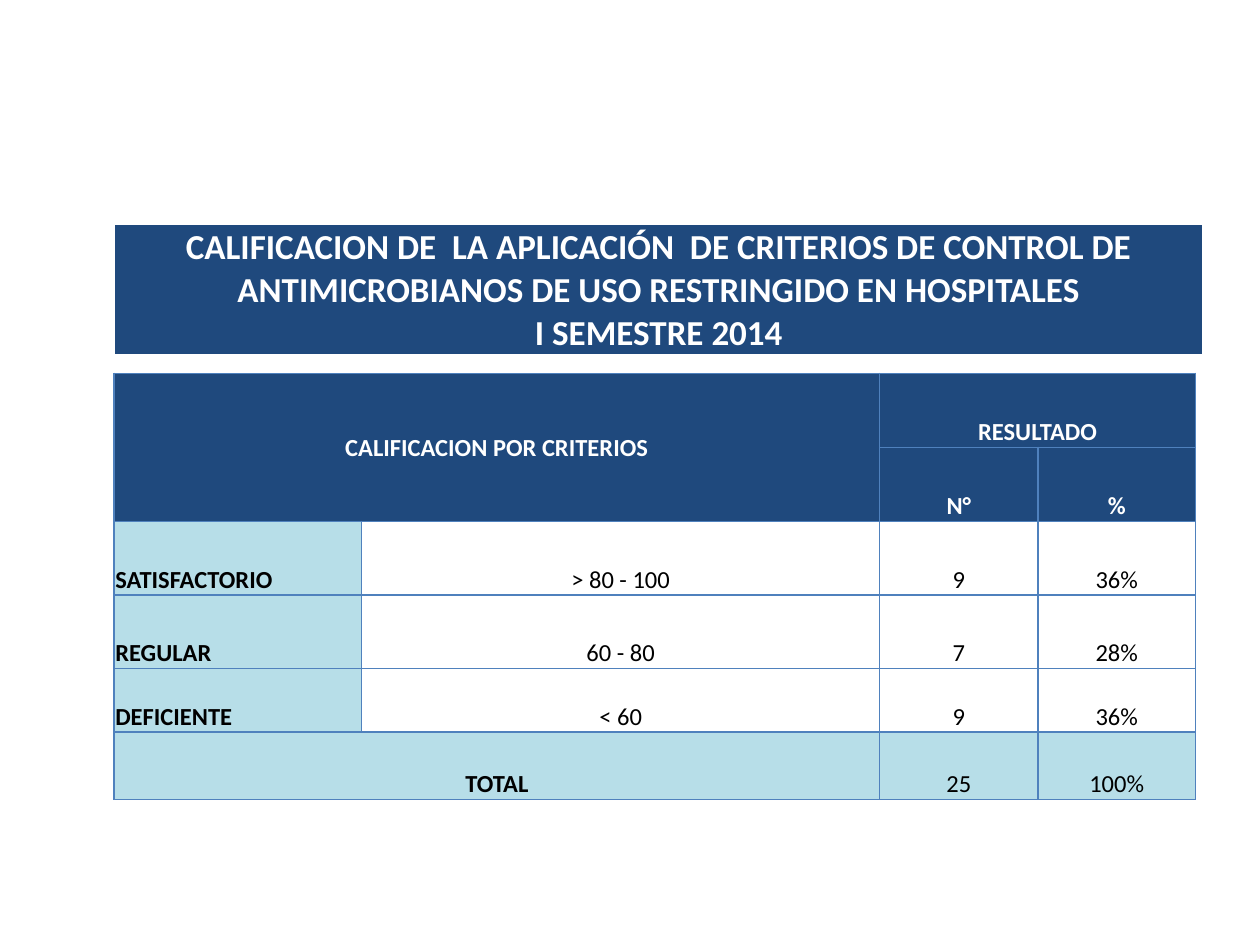
from dataclasses import dataclass

from lxml.etree import SubElement
from pptx import Presentation
from pptx.dml.color import RGBColor
from pptx.enum.text import MSO_ANCHOR, PP_ALIGN
from pptx.oxml.ns import qn
from pptx.util import Pt

NAVY, SKY, BLUE = "1F497D", "B7DEE8", "4F81BD"
WHITE, BLACK = "FFFFFF", "000000"


@dataclass
class Cell:
    row: int
    col: int
    text: str
    fill: str = WHITE
    color: str = BLACK
    bold: bool = False
    size: float = 14
    align: PP_ALIGN = PP_ALIGN.CENTER
    anchor: MSO_ANCHOR = MSO_ANCHOR.BOTTOM
    rows: int = 1
    cols: int = 1


def rgb(value: str) -> RGBColor:
    return RGBColor.from_string(value)


def write(tf, text: str, *, size: float, color: str, bold: bool, align: PP_ALIGN) -> None:
    p = tf.paragraphs[0]
    p.text = text
    p.alignment = align
    for r in p.runs:
        r.font.name = "Calibri"
        r.font.size = Pt(size)
        r.font.bold = bold
        r.font.color.rgb = rgb(color)


def set_borders(cell, color: str) -> None:
    """Draw a 1 pt line on all four sides; call before filling the cell."""
    tc_pr = cell._tc.get_or_add_tcPr()
    for side in ("a:lnL", "a:lnR", "a:lnT", "a:lnB"):
        ln = SubElement(tc_pr, qn(side), w=str(Pt(1)))
        fill = SubElement(ln, qn("a:solidFill"))
        SubElement(fill, qn("a:srgbClr"), val=color)


def draw_table(s, left: float, top: float, widths: list[float], heights: list[float],
               cells: list[Cell], border: str) -> None:
    frame = s.shapes.add_table(len(heights), len(widths), Pt(left), Pt(top),
                               Pt(sum(widths)), Pt(sum(heights)))
    table = frame.table
    table.first_row = table.horz_banding = False
    for column, width in zip(table.columns, widths):
        column.width = Pt(width)
    for row, height in zip(table.rows, heights):
        row.height = Pt(height)
    for cell in table.iter_cells():
        set_borders(cell, border)
    for item in cells:
        cell = table.cell(item.row, item.col)
        last_row, last_col = item.row + item.rows, item.col + item.cols
        if item.rows * item.cols > 1:
            cell.merge(table.cell(last_row - 1, last_col - 1))
        for row in range(item.row, last_row):
            for col in range(item.col, last_col):
                part = table.cell(row, col)
                part.fill.solid()
                part.fill.fore_color.rgb = rgb(item.fill)
        cell.margin_left = cell.margin_right = cell.margin_top = Pt(0.7)
        cell.margin_bottom = Pt(0)
        cell.vertical_anchor = item.anchor
        write(cell.text_frame, item.text, size=item.size, color=item.color,
              bold=item.bold, align=item.align)


def header(row: int, col: int, text: str, **options) -> Cell:
    return Cell(row, col, text, fill=NAVY, color=WHITE, bold=True, **options)


def main() -> None:
    prs = Presentation()
    prs.slide_width, prs.slide_height = Pt(720), Pt(540)
    s = prs.slides.add_slide(prs.slide_layouts[6])

    title = ("CALIFICACION DE  LA APLICACIÓN  DE CRITERIOS DE CONTROL DE "
             "ANTIMICROBIANOS DE USO RESTRINGIDO EN HOSPITALES\vI SEMESTRE 2014")
    draw_table(s, 65.5, 128.4, [622], [73],
               [header(0, 0, title, size=20, anchor=MSO_ANCHOR.MIDDLE)], WHITE)

    cells = [
        header(0, 0, "CALIFICACION POR CRITERIOS", rows=2, cols=2, anchor=MSO_ANCHOR.MIDDLE),
        header(0, 2, "RESULTADO", cols=2),
        header(1, 2, "N°"),
        header(1, 3, "%"),
    ]
    results = [
        ("SATISFACTORIO", "> 80 - 100", "9", "36%"),
        ("REGULAR", "60 - 80", "7", "28%"),
        ("DEFICIENTE", "< 60", "9", "36%"),
    ]
    for row, (grade, *values) in enumerate(results, start=2):
        cells.append(Cell(row, 0, grade, fill=SKY, bold=True, align=PP_ALIGN.LEFT))
        cells += [Cell(row, col, value) for col, value in enumerate(values, start=1)]
    cells += [
        Cell(5, 0, "TOTAL", fill=SKY, bold=True, cols=2),
        Cell(5, 2, "25", fill=SKY),
        Cell(5, 3, "100%", fill=SKY),
    ]
    draw_table(s, 65.2, 213.4, [141.5, 296, 90.5, 90],
               [42.3, 42.3, 42, 42, 36.5, 38.3], cells, BLUE)

    prs.save("out.pptx")


if __name__ == "__main__":
    main()
